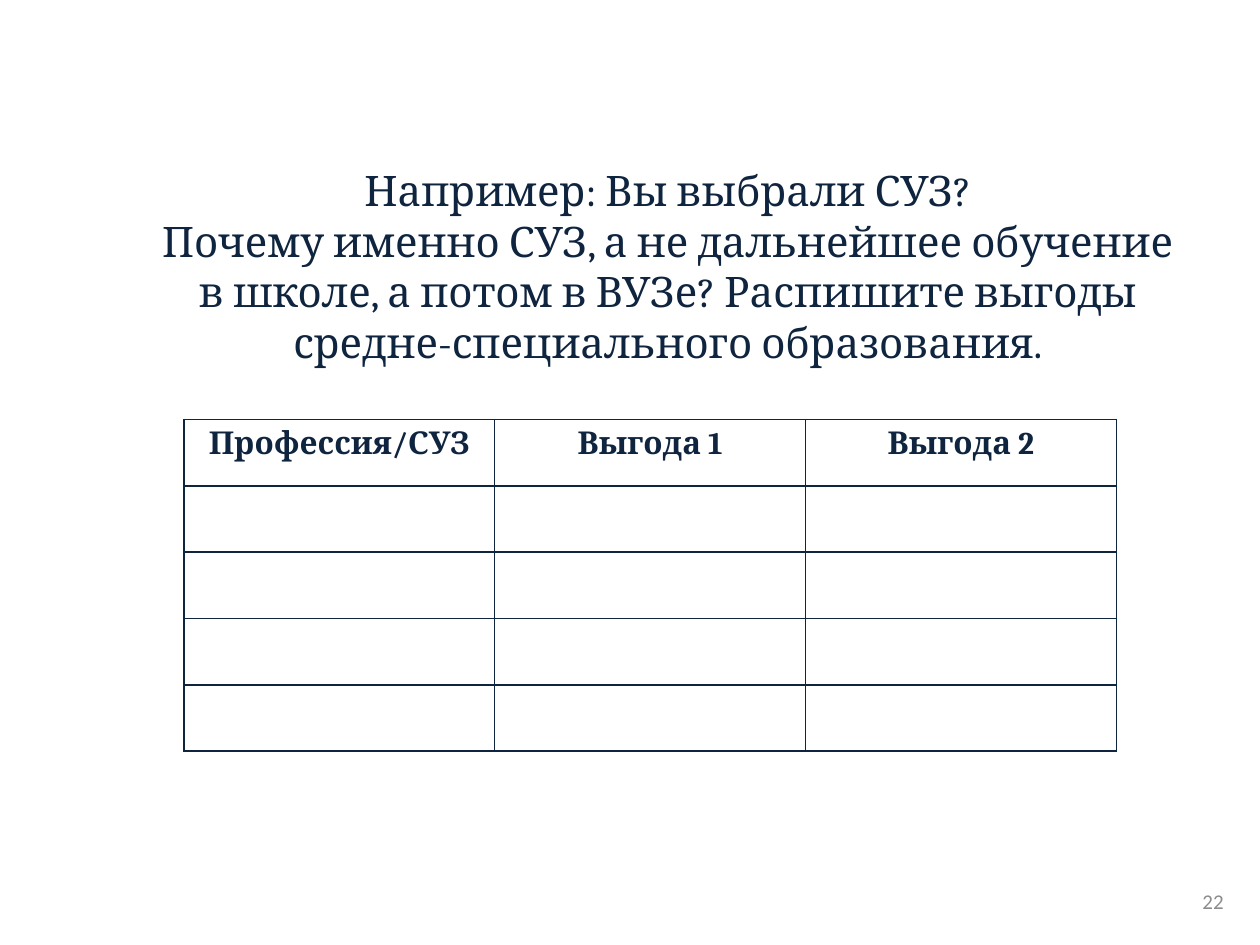
import pptx
import pptx.dml.color
import pptx.enum.text
import pptx.oxml.ns
import pptx.util
from lxml import etree

SLIDE_WIDTH = pptx.util.Inches(10)
SLIDE_HEIGHT = pptx.util.Inches(7.5)
NAVY = "0F243E"
GREY = "8C8C8C"
WHITE = "FFFFFF"
ALIGN = pptx.enum.text.PP_ALIGN
ANCHOR = pptx.enum.text.MSO_ANCHOR

QUESTION = [
    "Например: Вы выбрали СУЗ?",
    "Почему именно СУЗ, а не дальнейшее обучение в школе, "
    "а потом в ВУЗе? Распишите выгоды средне-специального образования.",
]
HEADINGS = ["Профессия/СУЗ", "Выгода 1", "Выгода 2"]
ROW_COUNT = 5


def color(value):
    return pptx.dml.color.RGBColor.from_string(value)


def box(left, top, width, height):
    """Turn shares of the slide's size into lengths."""
    return (
        round(left * SLIDE_WIDTH),
        round(top * SLIDE_HEIGHT),
        round(width * SLIDE_WIDTH),
        round(height * SLIDE_HEIGHT),
    )


def write(text_frame, lines, *, size, font="Cambria", fill=NAVY, bold=False, align=ALIGN.CENTER):
    for index, line in enumerate(lines):
        paragraph = text_frame.paragraphs[0] if index == 0 else text_frame.add_paragraph()
        paragraph.alignment = align
        run = paragraph.add_run()
        run.text = line
        run.font.name = font
        run.font.size = pptx.util.Pt(size)
        run.font.bold = bold
        run.font.color.rgb = color(fill)


def add_text(slide, place, lines, anchor=ANCHOR.TOP, **text_format):
    text_frame = slide.shapes.add_textbox(*place).text_frame
    text_frame.word_wrap = True
    text_frame.vertical_anchor = anchor
    write(text_frame, lines, **text_format)


def add_borders(cell, line_color, width):
    properties = cell._tc.get_or_add_tcPr()
    qualified = pptx.oxml.ns.qn
    for side in ("lnL", "lnR", "lnT", "lnB"):
        line = etree.SubElement(properties, qualified(f"a:{side}"), w=str(pptx.util.Pt(width)))
        fill = etree.SubElement(line, qualified("a:solidFill"))
        etree.SubElement(fill, qualified("a:srgbClr"), val=line_color)


def add_benefit_table(slide, place):
    table = slide.shapes.add_table(ROW_COUNT, len(HEADINGS), *place).table
    table.first_row = False
    table.horz_banding = False
    for cell in table.iter_cells():
        add_borders(cell, NAVY, 1)
        cell.fill.solid()
        cell.fill.fore_color.rgb = color(WHITE)
    for column, heading in enumerate(HEADINGS):
        write(table.cell(0, column).text_frame, [heading], size=18, bold=True)


def main():
    presentation = pptx.Presentation()
    presentation.slide_width = SLIDE_WIDTH
    presentation.slide_height = SLIDE_HEIGHT
    slide = presentation.slides.add_slide(presentation.slide_layouts[6])

    add_text(slide, box(0.717, 0.927, 0.264, 0.053), ["22"], anchor=ANCHOR.MIDDLE,
             size=12, font="Calibri", fill=GREY, align=ALIGN.RIGHT)
    add_text(slide, box(0.106, 0.168, 0.848, 0.336), QUESTION, size=24)
    add_benefit_table(slide, box(0.146, 0.444, 0.74, 0.351))

    presentation.save("out.pptx")


if __name__ == "__main__":
    main()
